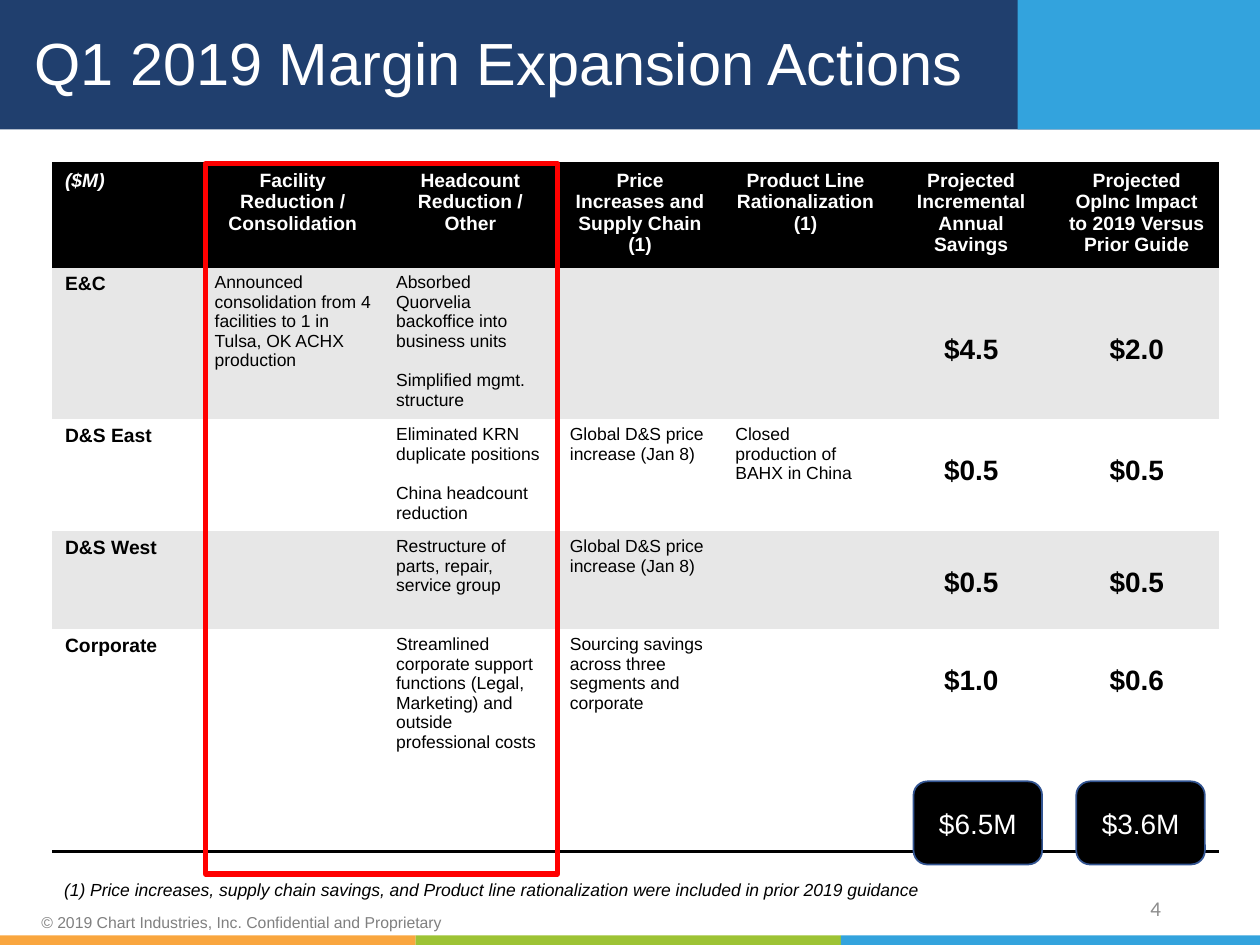
from collections import namedtuple
from itertools import pairwise

from lxml import etree
from pptx import Presentation
from pptx import util as u
from pptx.dml.color import RGBColor
from pptx.enum import shapes, text
from pptx.oxml import ns

Pt = u.Pt
Box = namedtuple("Box", "left top width height")
COLORS = {
    "navy": "203F6E", "sky": "33A3DD", "orange": "F9A63F", "green": "9DC335",
    "black": "000000", "white": "FFFFFF", "band": "E7E7E7", "red": "FF0000",
    "outline": "325491", "copyright": "808080", "number": "8C8C8C",
}
LEFT, CENTER, RIGHT = text.PP_ALIGN.LEFT, text.PP_ALIGN.CENTER, text.PP_ALIGN.RIGHT
NO_STYLE = "{2D5ABB26-0587-4C30-8999-92F81FD0307C}"

COLUMNS = [85.5, 103.7, 99.3, 94.6, 94.6, 94.6, 94.6]
ROWS = [58.9, 85.8, 64, 56, 75.6, 51.8]
HEADINGS = [
    "($M)", "Facility Reduction / Consolidation", "Headcount Reduction / Other",
    "Price Increases and Supply Chain (1)", "Product Line Rationalization (1)",
    "Projected Incremental Annual Savings",
    "Projected OpInc Impact to 2019 Versus Prior Guide",
]
# Segment, four action columns, savings, impact, lines above the amounts
ACTIONS = [
    ("E&C", "Announced consolidation from 4 facilities to 1 in Tulsa, OK ACHX production",
     "Absorbed Quorvelia backoffice into business units\nSimplified mgmt. structure",
     "", "", "$4.5", "$2.0", 2),
    ("D&S East", "", "Eliminated KRN duplicate positions\nChina headcount reduction",
     "Global D&S price increase (Jan 8)", "Closed production of BAHX in China",
     "$0.5", "$0.5", 1),
    ("D&S West", "", "Restructure of parts, repair, service group",
     "Global D&S price increase (Jan 8)", "", "$0.5", "$0.5", 1),
    ("Corporate", "", "Streamlined corporate support functions (Legal, Marketing) "
     "and outside professional costs",
     "Sourcing savings across three segments and corporate", "", "$1.0", "$0.6", 1),
]


def color(name):
    return RGBColor.from_string(COLORS[name])


def write(frame, words, size=10, tone="black", font="Arial", bold=False,
          italic=False, align=LEFT, gap=0, spacing=None):
    """Fill a text frame, one paragraph per line of words."""
    frame.text = words
    for index, para in enumerate(frame.paragraphs):
        para.alignment = align
        para.line_spacing = spacing
        if index:
            para.space_before = Pt(gap)
        for span in para.runs:
            span.font.name, span.font.size = font, Pt(size)
            span.font.bold, span.font.italic = bold, italic
            span.font.color.rgb = color(tone)


def add_shape(page, box, fill=None, line=None, weight=1,
              kind=shapes.MSO_SHAPE.RECTANGLE):
    shape = page.shapes.add_shape(kind, *map(Pt, box))
    shape.shadow.inherit = False
    if fill:
        shape.fill.solid()
        shape.fill.fore_color.rgb = color(fill)
    else:
        shape.fill.background()
    if line:
        shape.line.color.rgb = color(line)
        shape.line.width = Pt(weight)
    else:
        shape.line.fill.background()
    return shape


def add_label(page, box, words, anchor=text.MSO_ANCHOR.MIDDLE, inset=3.6, **style):
    frame = page.shapes.add_textbox(*map(Pt, box)).text_frame
    frame.word_wrap = True
    frame.vertical_anchor = anchor
    frame.margin_top = frame.margin_bottom = Pt(inset)
    write(frame, words, **style)


def add_header(page, box):
    accent = 138.5
    split = box.left + box.width - accent
    add_shape(page, box, "navy")
    add_shape(page, Box(split, box.top, accent, box.height), "sky")
    title = page.shapes.title
    title.left, title.top = Pt(box.left + 12.5), Pt(box.top + 6.5)
    title.width, title.height = Pt(564), Pt(62.5)
    frame = title.text_frame
    frame.word_wrap = True
    frame.auto_size = text.MSO_AUTO_SIZE.NONE
    frame.vertical_anchor = text.MSO_ANCHOR.MIDDLE
    write(frame, "Q1 2019 Margin Expansion Actions", 34, "white", spacing=0.9)
    # Bring the title in front of the bands
    title.element.getparent().append(title.element)


def add_footer(page, box):
    stripe = 5.5
    edges = [-3, 237.5, 480.5, 721]
    for (start, end), fill in zip(pairwise(edges), ("orange", "green", "sky")):
        add_shape(page, Box(box.left + start, box.top + box.height - stripe,
                            end - start, stripe), fill)
    add_label(page, Box(box.left + 16.5, box.top + 15.5, 250, 13),
              "© 2019 Chart Industries, Inc. Confidential and Proprietary",
              inset=1.4, size=9, tone="copyright")
    add_label(page, Box(box.left + 508.5, box.top - 0.5, 162, 29), "4",
              size=12, tone="number", font="Calibri", align=RIGHT)


def add_border(cell, sides):
    """Draw 2 pt black edges; sides are given in the order T, B."""
    for index, side in enumerate(sides):
        line = etree.Element(ns.qn("a:ln" + side), w=str(Pt(2)))
        fill = etree.SubElement(line, ns.qn("a:solidFill"))
        etree.SubElement(fill, ns.qn("a:srgbClr"), val=COLORS["black"])
        cell._tc.get_or_add_tcPr().insert(index, line)


def fill_row(table, row, words, fill):
    for column, entry in enumerate(words):
        cell = table.cell(row, column)
        cell.margin_bottom = 0
        cell.fill.solid()
        cell.fill.fore_color.rgb = color(fill)
        yield column, cell, entry


def add_actions(page, box):
    frame = page.shapes.add_table(len(ROWS), len(COLUMNS), *map(Pt, box))
    table = frame.table
    table.first_row = table.horz_banding = False
    table._tbl.tblPr.find(ns.qn("a:tableStyleId")).text = NO_STYLE
    for column, width in zip(table.columns, COLUMNS):
        column.width = Pt(width)
    for row, height in zip(table.rows, ROWS):
        row.height = Pt(height)

    # Headings
    for column, cell, words in fill_row(table, 0, HEADINGS, "black"):
        write(cell.text_frame, words, 11, "white", bold=True,
              italic=column == 0, align=CENTER if column else LEFT)
        add_border(cell, "TB")

    # One row per segment
    for row, (*entries, lines_above) in enumerate(ACTIONS, 1):
        fill = "band" if row % 2 else "white"
        for column, cell, words in fill_row(table, row, entries, fill):
            if column == 0:
                write(cell.text_frame, words, 11, bold=True)
            elif column < 5:
                write(cell.text_frame, words, gap=11.2)
            else:
                cell.margin_top = Pt(3.6 + 17.5 * lines_above)
                write(cell.text_frame, words, 16, bold=True, align=CENTER)

    # Closing rule
    for column in range(len(COLUMNS)):
        cell = table.cell(len(ROWS) - 1, column)
        cell.fill.background()
        add_border(cell, "B")


def add_total(page, box, words):
    shape = add_shape(page, box, "black", "outline",
                      kind=shapes.MSO_SHAPE.ROUNDED_RECTANGLE)
    shape.text_frame.vertical_anchor = text.MSO_ANCHOR.MIDDLE
    write(shape.text_frame, words, 16, "white", align=CENTER)


def main():
    deck = Presentation()
    deck.slide_width, deck.slide_height = Pt(720), Pt(540)
    page = deck.slides.add_slide(deck.slide_layouts[5])
    add_header(page, Box(0, 0, 720, 74))
    add_footer(page, Box(0, 505, 720, 35))
    add_actions(page, Box(30, 93.5, sum(COLUMNS), sum(ROWS)))
    add_label(page, Box(29.5, 499, 552, 19.5),
              "(1) Price increases, supply chain savings, and Product line "
              "rationalization were included in prior 2019 guidance",
              anchor=text.MSO_ANCHOR.TOP, italic=True)
    # Totals and the highlighted columns
    for index, total in enumerate(("$6.5M", "$3.6M")):
        add_total(page, Box(522 + 93 * index, 446.5, 73.5, 47.5), total)
    add_shape(page, Box(117.5, 93.5, 201, 406), line="red", weight=3)
    deck.save("out.pptx")


if __name__ == "__main__":
    main()
